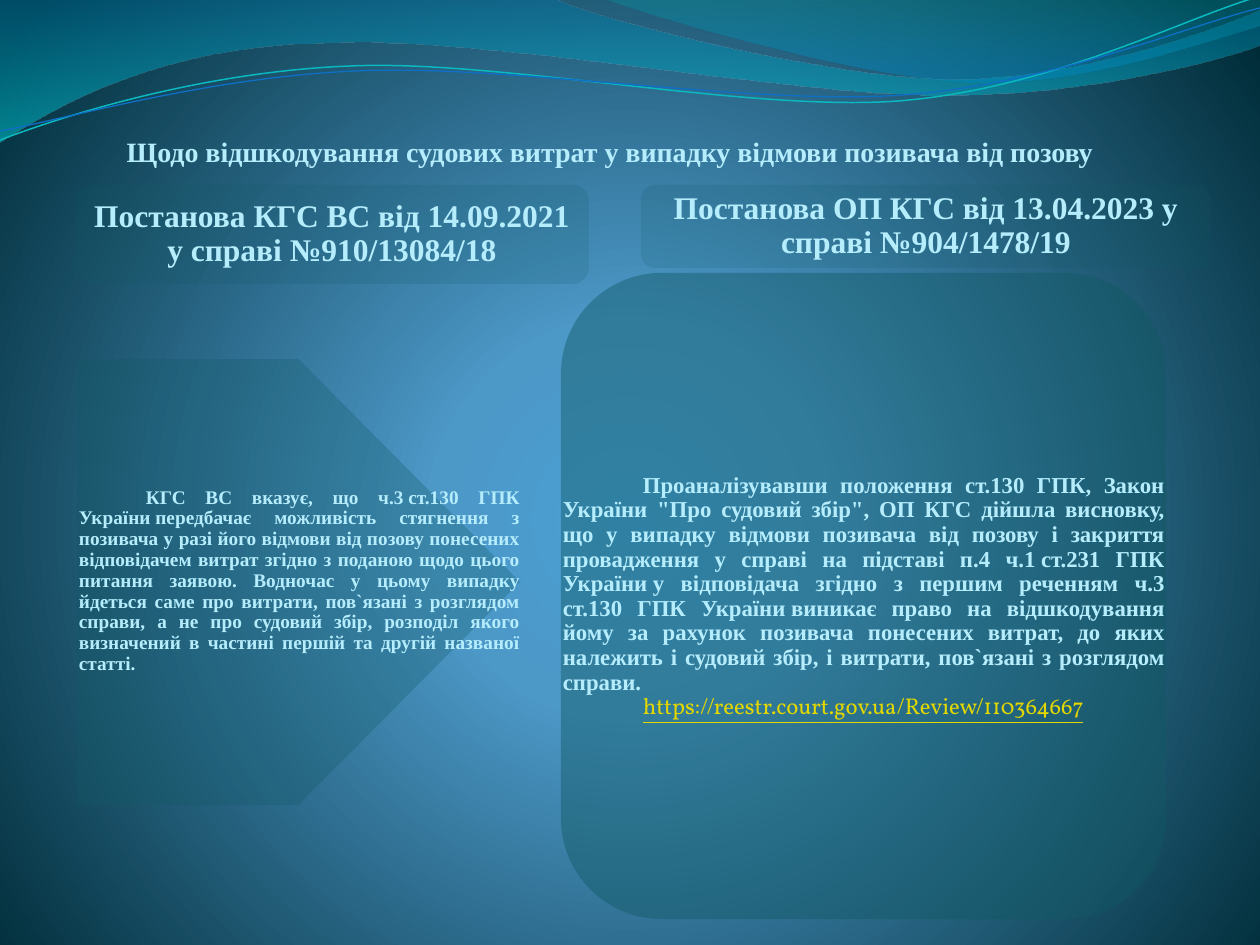
"""Build a slide comparing two court rulings on costs after a claim is withdrawn."""
from dataclasses import dataclass

from lxml import etree
from pptx import Presentation
from pptx import util as u
from pptx.dml.color import RGBColor
from pptx.enum import shapes, text
from pptx.oxml.ns import qn

PX = 914400 / 126
NBSP = chr(160)


@dataclass(frozen=True)
class Theme:
    """Colours, typefaces and type sizes of the slide."""
    pale: str = "B5EDFD"
    link: str = "E2D700"
    panel: str = "115964"
    background: tuple = ((0, "4AA0D6", 100), (25, "4C98C7", 100), (100, "002C38", 100))
    wide_wave: tuple = ((0, "0074A1", 45), (100, "00C6CF", 55))
    corner_wave: tuple = ((0, "00A1A9", 30), (80, "008BBF", 45))
    cyan_line: str = "0AB8BF"
    blue_line: str = "0F6FC6"
    serif: str = "Times New Roman"
    link_face: str = "Vollkorn"
    title_size: float = 16
    heading_size: float = 18
    left_size: float = 11
    right_size: float = 13


THEME = Theme()

TITLE = "Щодо відшкодування судових витрат у випадку відмови позивача від позову "
LEFT_HEADING = "Постанова КГС ВС від 14.09.2021 у справі №910/13084/18"
RIGHT_HEADING = "Постанова ОП КГС від 13.04.2023 у справі №904/1478/19"
LEFT_BODY = (
    f"КГС ВС вказує, що ч.3{NBSP}ст.130 ГПК України{NBSP}передбачає можливість стягнення з "
    "позивача у разі його відмови від позову понесених відповідачем витрат згідно з поданою "
    "щодо цього питання заявою. Водночас у цьому випадку йдеться саме про витрати, пов`язані "
    "з розглядом справи, а не про судовий збір, розподіл якого визначений в частині першій та "
    "другій названої статті."
)
RIGHT_BODY = (
    "Проаналізувавши положення ст.130 ГПК, Закон України \"Про судовий збір\", ОП КГС дійшла "
    "висновку, що у випадку відмови позивача від позову і закриття провадження у справі на "
    f"підставі п.4 ч.1{NBSP}ст.231 ГПК України{NBSP}у відповідача згідно з першим реченням ч.3 "
    f"ст.130 ГПК України{NBSP}виникає право на відшкодування йому за рахунок позивача "
    "понесених витрат, до яких належить і судовий збір, і витрати, пов`язані з розглядом справи."
)
LINK = "https://reestr.court.gov.ua/Review/110364667"

WIDE_WAVE = [
    [(0, 0)], [(554, -1)],
    [(600, 21), (837, 79), (955, 79)], [(1075, 79), (1207, 33), (1260, 11)],
    [(1261, 45)], [(1238, 55), (1096, 96), (940, 95)],
    [(784, 95), (481, 35), (324, 43)], [(163, 45), (58, 105), (-1, 142)], [(0, 0)],
]
CORNER_WAVE = [
    [(604, -1)], [(641, 14), (859, 78), (969, 82)],
    [(1079, 87), (1211, 40), (1260, 26)], [(1260, 0)], [(604, -1)],
]
CYAN_LINE = [
    [(0, 140)], [(60, 117), (199, 72), (349, 66)],
    [(498, 59), (747, 112), (898, 101)], [(1050, 89), (1182, 19), (1257, -3)],
]
BLUE_LINE = [
    [(0, 131)], [(59, 121), (207, 77), (357, 71)],
    [(508, 64), (752, 106), (903, 95)], [(1053, 84), (1186, 26), (1260, 8)],
]


def px(length):
    """Turn pixels into EMU."""
    return u.Emu(round(length * PX))


def apply(target, values):
    """Set each named attribute on the target."""
    for name, value in values.items():
        setattr(target, name, value)


def add_alpha(colour, opacity):
    """Give a colour element an opacity in percent."""
    etree.SubElement(colour, qn("a:alpha"), val=str(opacity * 1000))


def set_gradient(fill, owner, stops, focus=None):
    """Fill with a vertical gradient, or a circular one around a focus."""
    fill.gradient()
    gradient = owner.xpath(".//a:gradFill")[0]
    for child in list(gradient):
        gradient.remove(child)
    stop_list = etree.SubElement(gradient, qn("a:gsLst"))
    for position, colour, opacity in stops:
        stop = etree.SubElement(stop_list, qn("a:gs"), pos=str(position * 1000))
        colour_element = etree.SubElement(stop, qn("a:srgbClr"), val=colour)
        if opacity < 100:
            add_alpha(colour_element, opacity)
    if focus:
        circle = etree.SubElement(gradient, qn("a:path"), path="circle")
        sides = {side: str(share * 1000) for side, share in focus.items()}
        etree.SubElement(circle, qn("a:fillToRect"), **sides)
    else:
        etree.SubElement(gradient, qn("a:lin"), ang="5400000", scaled="0")


def add_curve(slide, segments, closed):
    """Add a freeform, bending each segment that has control points."""
    anchors = [segment[-1] for segment in segments]
    left, top = (min(values) for values in zip(*anchors))
    builder = slide.shapes.build_freeform(*anchors[0], scale=PX)
    builder.add_line_segments(anchors[1:], close=closed)
    shape = builder.convert_to_shape()
    shape.shadow.inherit = False
    for line, segment in zip(shape.element.xpath(".//a:lnTo"), segments[1:]):
        if len(segment) == 3:
            curve = etree.Element(qn("a:cubicBezTo"))
            for x, y in segment:
                etree.SubElement(curve, qn("a:pt"), x=str(x - left), y=str(y - top))
            line.getparent().replace(line, curve)
    return shape


def add_wave(slide, segments, stops):
    """Add a translucent wave."""
    shape = add_curve(slide, segments, True)
    set_gradient(shape.fill, shape.element, stops)
    shape.line.fill.background()


def add_wave_line(slide, segments, colour, width):
    """Add a thin curved line."""
    shape = add_curve(slide, segments, False)
    shape.fill.background()
    shape.line.color.rgb = RGBColor.from_string(colour)
    shape.line.width = u.Pt(width)


def add_panel(slide, kind, box, opacity):
    """Add a translucent panel."""
    shape = slide.shapes.add_shape(kind, *map(px, box))
    shape.shadow.inherit = False
    shape.fill.solid()
    shape.fill.fore_color.rgb = RGBColor.from_string(THEME.panel)
    add_alpha(shape.element.xpath("./p:spPr/a:solidFill/a:srgbClr")[0], opacity)
    shape.line.fill.background()


def format_frame(frame, margins):
    """Give a text frame wrapping, middle anchoring and margins."""
    sides = ("margin_left", "margin_top", "margin_right", "margin_bottom")
    apply(frame, {"word_wrap": True, "auto_size": text.MSO_AUTO_SIZE.NONE,
                  "vertical_anchor": text.MSO_ANCHOR.MIDDLE,
                  **dict(zip(sides, map(px, margins)))})


def write(paragraph, words, size, align, indent=0, link=False):
    """Write one formatted paragraph."""
    apply(paragraph, {"alignment": align, "line_spacing": 0.9})
    if indent:
        paragraph._p.get_or_add_pPr().set("indent", str(px(indent)))
    run = paragraph.add_run()
    run.text = words
    apply(run.font, {"size": u.Pt(size), "bold": not link, "underline": link,
                     "name": THEME.link_face if link else THEME.serif})
    run.font.color.rgb = RGBColor.from_string(THEME.link if link else THEME.pale)


def add_text(slide, box, margins):
    """Add a text box and return its frame."""
    frame = slide.shapes.add_textbox(*map(px, box)).text_frame
    format_frame(frame, margins)
    return frame


def add_heading(slide, words, box, opacity):
    """Add a rounded heading panel with centred text."""
    add_panel(slide, shapes.MSO_SHAPE.ROUNDED_RECTANGLE, box, opacity)
    frame = add_text(slide, box, (9, 9, 9, 9))
    write(frame.paragraphs[0], words, THEME.heading_size, text.PP_ALIGN.CENTER)


def add_body(slide, kind, box, opacity, margins, words, size, indent, link=None):
    """Add a body panel with justified text and an optional address."""
    add_panel(slide, kind, box, opacity)
    frame = add_text(slide, box, margins)
    write(frame.paragraphs[0], words, size, text.PP_ALIGN.JUSTIFY, indent)
    if link:
        write(frame.add_paragraph(), link, size, text.PP_ALIGN.JUSTIFY, indent, True)


def set_title(slide, words, box):
    """Place and write the title."""
    title = slide.shapes.title
    apply(title, dict(zip(("left", "top", "width", "height"), map(px, box))))
    format_frame(title.text_frame, (0, 0, 2, 0))
    write(title.text_frame.paragraphs[0], words, THEME.title_size, text.PP_ALIGN.CENTER)


def main():
    """Build and save the slide."""
    presentation = Presentation()
    apply(presentation, {"slide_width": px(1260), "slide_height": px(945)})
    slide = presentation.slides.add_slide(presentation.slide_layouts[5])
    set_gradient(slide.background.fill, slide.element, THEME.background,
                 {"l": 10, "t": 110, "r": 10, "b": 100})
    add_wave(slide, WIDE_WAVE, THEME.wide_wave)
    add_wave(slide, CORNER_WAVE, THEME.corner_wave)
    add_wave_line(slide, CYAN_LINE, THEME.cyan_line, 0.85)
    add_wave_line(slide, BLUE_LINE, THEME.blue_line, 0.75)
    set_title(slide, TITLE, (84, 136, 1061, 34))
    add_body(slide, shapes.MSO_SHAPE.PENTAGON, (77, 359, 443, 446), 29, (2, 1, 0, 3),
             LEFT_BODY, THEME.left_size, 67)
    add_body(slide, shapes.MSO_SHAPE.FLOWCHART_ALTERNATE_PROCESS, (561, 273, 605, 646), 44,
             (2, 3, 2, 2), RIGHT_BODY, THEME.right_size, 80, LINK)
    add_heading(slide, LEFT_HEADING, (75, 185, 514, 99), 17)
    add_heading(slide, RIGHT_HEADING, (641, 185, 570, 83), 16)
    presentation.save("out.pptx")


if __name__ == "__main__":
    main()
